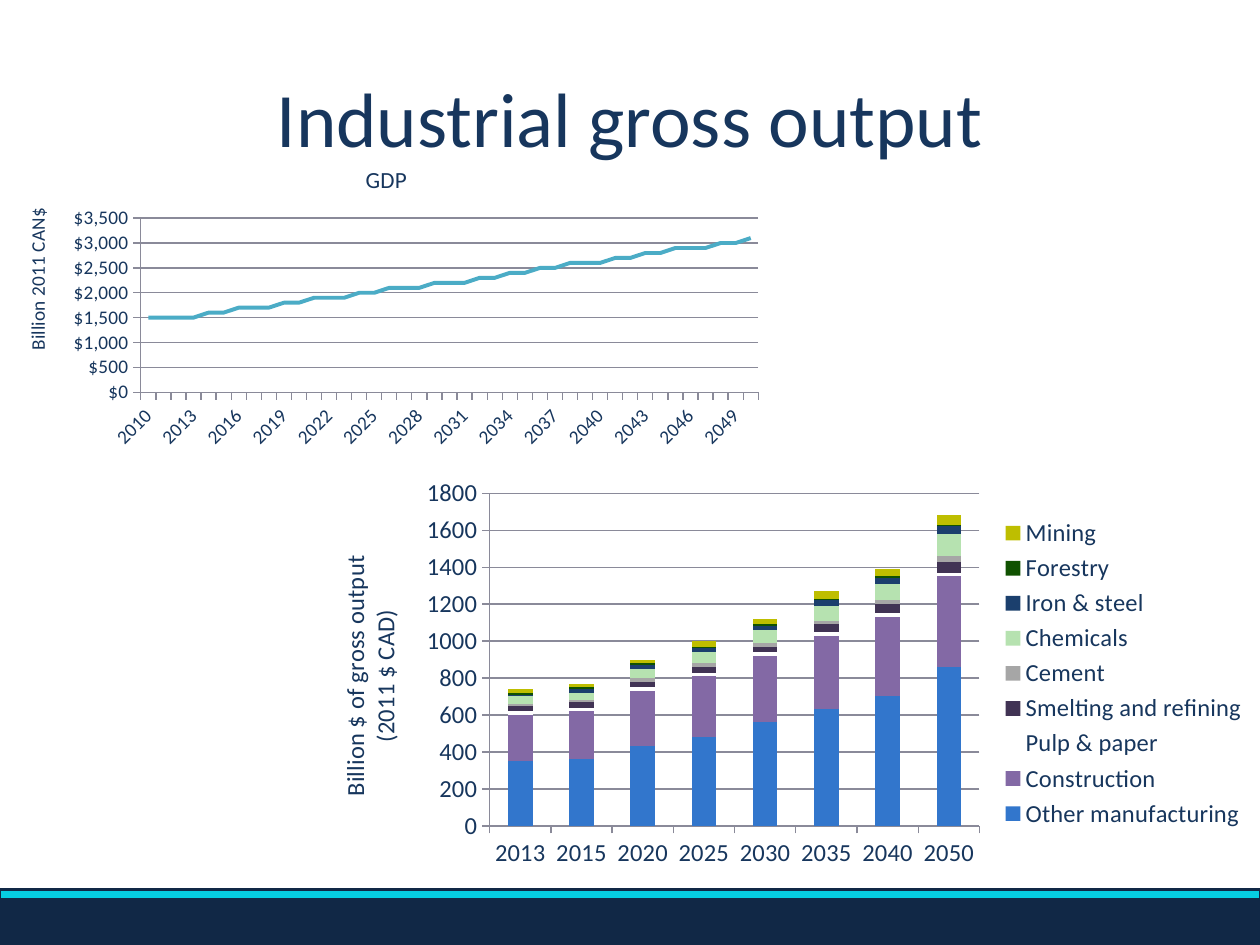
import pptx
import pptx.chart.data
import pptx.dml.color
import pptx.enum.chart
import pptx.enum.shapes
import pptx.enum.text
import pptx.oxml
import pptx.util

Cm, Pt = pptx.util.Cm, pptx.util.Pt
RGB = pptx.dml.color.RGBColor
Kind = pptx.enum.chart.XL_CHART_TYPE
Tick = pptx.enum.chart.XL_TICK_MARK

INK = RGB(0x17, 0x36, 0x5D)
NAVY = RGB(0x11, 0x28, 0x46)
CYAN = RGB(0x06, 0xCD, 0xE2)
TEAL = RGB(0x4B, 0xAC, 0xC6)
GRID = RGB(0x8A, 0x8A, 0x99)
FONT = "Calibri"

# Gross output by sector: name, colour, one value per year
YEARS = ["2013", "2015", "2020", "2025", "2030", "2035", "2040", "2050"]
SECTORS = [
    ("Other manufacturing", RGB(0x32, 0x76, 0xCC), [350, 360, 430, 480, 560, 630, 700, 860]),
    ("Construction", RGB(0x83, 0x69, 0xA5), [250, 260, 300, 330, 360, 400, 430, 490]),
    ("Pulp & paper", RGB(0xFF, 0xFF, 0xFF), [20] * 8),
    ("Smelting and refining", RGB(0x41, 0x33, 0x54), [30, 30, 30, 30, 30, 40, 50, 60]),
    ("Cement", RGB(0xA6, 0xA6, 0xA6), [10, 10, 20, 20, 20, 20, 20, 30]),
    ("Chemicals", RGB(0xB6, 0xE2, 0xB0), [40, 40, 50, 60, 70, 80, 90, 120]),
    ("Iron & steel", RGB(0x1B, 0x3F, 0x6D), [10, 20, 20, 20, 20, 30, 30, 40]),
    ("Forestry", RGB(0x10, 0x52, 0x00), [10] * 8),
    ("Mining", RGB(0xBE, 0xBE, 0x00), [20, 20, 20, 30, 30, 40, 40, 50]),
]
# GDP from 2010 to 2050: how many years it stays at 1500, 1600, ... 3100
STAYS = [4, 2, 3, 2, 3, 2, 3, 3, 2, 2, 2, 3, 2, 2, 3, 2, 1]
GDP = [1500 + 100 * n for n, stay in enumerate(STAYS) for _ in range(stay)]


def place(part, index, inner=False, **spots):
    """Give a chart part a fixed layout, in percent of the chart."""
    for old in part.xpath("c:layout"):
        part.remove(old)
    target = '<c:layoutTarget val="inner"/>' if inner else ""
    modes = "".join(f'<c:{k}Mode val="edge"/>' for k in "xy")
    sizes = "".join(f'<c:{k} val="{v / 100:.4f}"/>' for k, v in spots.items())
    uri = "http://schemas.openxmlformats.org/drawingml/2006/chart"
    part.insert(index, pptx.oxml.parse_xml(
        f'<c:layout xmlns:c="{uri}"><c:manualLayout>{target}{modes}{sizes}'
        "</c:manualLayout></c:layout>"))


def label(title, text, size, **spot):
    """Write and place a chart or axis title."""
    frame = title.text_frame
    frame.text = text
    for para in frame.paragraphs:
        for run in para.runs:
            font = run.font
            font.name, font.size, font.bold = FONT, Pt(size), False
            font.color.rgb = INK
    place(title._element, 1, **spot)
    return frame


def add_plot(slide, box, kind, data, size, area):
    """Add a chart with the shared font, axes and grid."""
    chart = slide.shapes.add_chart(kind, *map(Cm, box), data).chart
    chart.font.name, chart.font.size = FONT, Pt(size)
    chart.font.color.rgb = INK
    chart.has_title = chart.has_legend = False
    for axis in (chart.category_axis, chart.value_axis):
        axis.major_tick_mark, axis.minor_tick_mark = Tick.OUTSIDE, Tick.NONE
        axis.format.line.color.rgb = GRID
    axis.minimum_scale = 0
    axis.has_major_gridlines = True
    axis.major_gridlines.format.line.color.rgb = GRID
    axis.tick_labels.number_format_is_linked = False
    place(chart._chartSpace.chart.plotArea, 0, inner=True, **area)
    return chart


def side(chart, text, size, **spot):
    """Add the upright title of the value axis."""
    frame = label(chart.value_axis.axis_title, text, size, **spot)
    frame._txBody.bodyPr.set("rot", "-5400000")


def add_gdp(slide, box):
    data = pptx.chart.data.CategoryChartData()
    data.categories = [str(year) for year in range(2010, 2051)]
    data.add_series("Series 1", GDP)
    chart = add_plot(slide, box, Kind.LINE, data, 11,
                     dict(x=18.2, y=23.6, w=79.8, h=56))
    chart.has_title = True
    label(chart.chart_title, "GDP", 13.2, x=46.7, y=4.7)
    side(chart, "Billion 2011 CAN$", 11, x=2.7, y=19)
    chart.value_axis.maximum_scale = 3500
    chart.value_axis.major_unit = 500
    chart.value_axis.tick_labels.number_format = '"$"#,##0'

    # Slanted labels, one for every third year
    axis = chart.category_axis
    axis.tick_labels.font.size = Pt(11)
    axis._element.txPr.bodyPr.set("rot", "-2700000")
    skip = pptx.oxml.parse_xml(
        '<c:tickLblSkip xmlns:c='
        '"http://schemas.openxmlformats.org/drawingml/2006/chart" val="3"/>')
    axis._element.xpath("c:noMultiLvlLbl")[0].addprevious(skip)

    line = chart.plots[0].series[0]
    line.smooth = False
    line.marker.style = pptx.enum.chart.XL_MARKER_STYLE.NONE
    line.format.line.color.rgb = TEAL
    line.format.line.width = Pt(2.25)
    chart.plots[0].vary_by_categories = False


def add_output(slide, box):
    data = pptx.chart.data.CategoryChartData()
    data.categories = YEARS
    for name, _, vals in SECTORS:
        data.add_series(name, vals)
    chart = add_plot(slide, box, Kind.COLUMN_STACKED, data, 14,
                     dict(x=18.7, y=5.8, w=51.7, h=82))
    side(chart, "Billion $ of gross output\n(2011 $ CAD)", 14, x=2.3, y=20.2)
    chart.value_axis.maximum_scale = 1800
    chart.value_axis.major_unit = 200
    chart.value_axis.tick_labels.number_format = "0"

    plot = chart.plots[0]
    plot.gap_width, plot.overlap = 150, 100
    plot.vary_by_categories = False
    for bar, (_, color, _) in zip(plot.series, SECTORS):
        bar.format.fill.solid()
        bar.format.fill.fore_color.rgb = color

    chart.has_legend = True
    chart.legend.position = pptx.enum.chart.XL_LEGEND_POSITION.RIGHT
    chart.legend.include_in_layout = False
    place(chart.legend._element, 1, x=71.6, y=10.7, w=28, h=79)


def add_title(slide, box):
    title = slide.shapes.title
    title.left, title.top, title.width, title.height = map(Cm, box)
    frame = title.text_frame
    frame.text = "Industrial gross output"
    frame.vertical_anchor = pptx.enum.text.MSO_ANCHOR.MIDDLE
    para = frame.paragraphs[0]
    para.alignment = pptx.enum.text.PP_ALIGN.CENTER
    font = para.runs[0].font
    font.name, font.size = FONT, Pt(44)
    font.color.rgb = INK


def add_foot(slide, box):
    """Draw the thin cyan band above the navy band."""
    left, top, width, height = box
    thin = 0.2
    bands = [(top, thin, CYAN, 1.5), (top + thin, height - thin, NAVY, 1)]
    for y, tall, color, edge in bands:
        band = slide.shapes.add_shape(
            pptx.enum.shapes.MSO_SHAPE.RECTANGLE,
            Cm(left), Cm(y), Cm(width), Cm(tall))
        band.shadow.inherit = False
        band.fill.solid()
        band.fill.fore_color.rgb = color
        band.line.color.rgb = NAVY
        band.line.width = Pt(edge)


def main():
    deck = pptx.Presentation()
    deck.slide_width, deck.slide_height = Cm(25.4), Cm(19.05)
    slide = deck.slides.add_slide(deck.slide_layouts[5])
    add_title(slide, (1.27, 0.76, 22.86, 3.18))
    add_output(slide, (6.3, 9.47, 19.1, 8.18))
    add_gdp(slide, (0, 2.92, 15.6, 6.27))
    add_foot(slide, (0, 17.93, 25.4, 1.12))
    deck.save("out.pptx")


if __name__ == "__main__":
    main()
